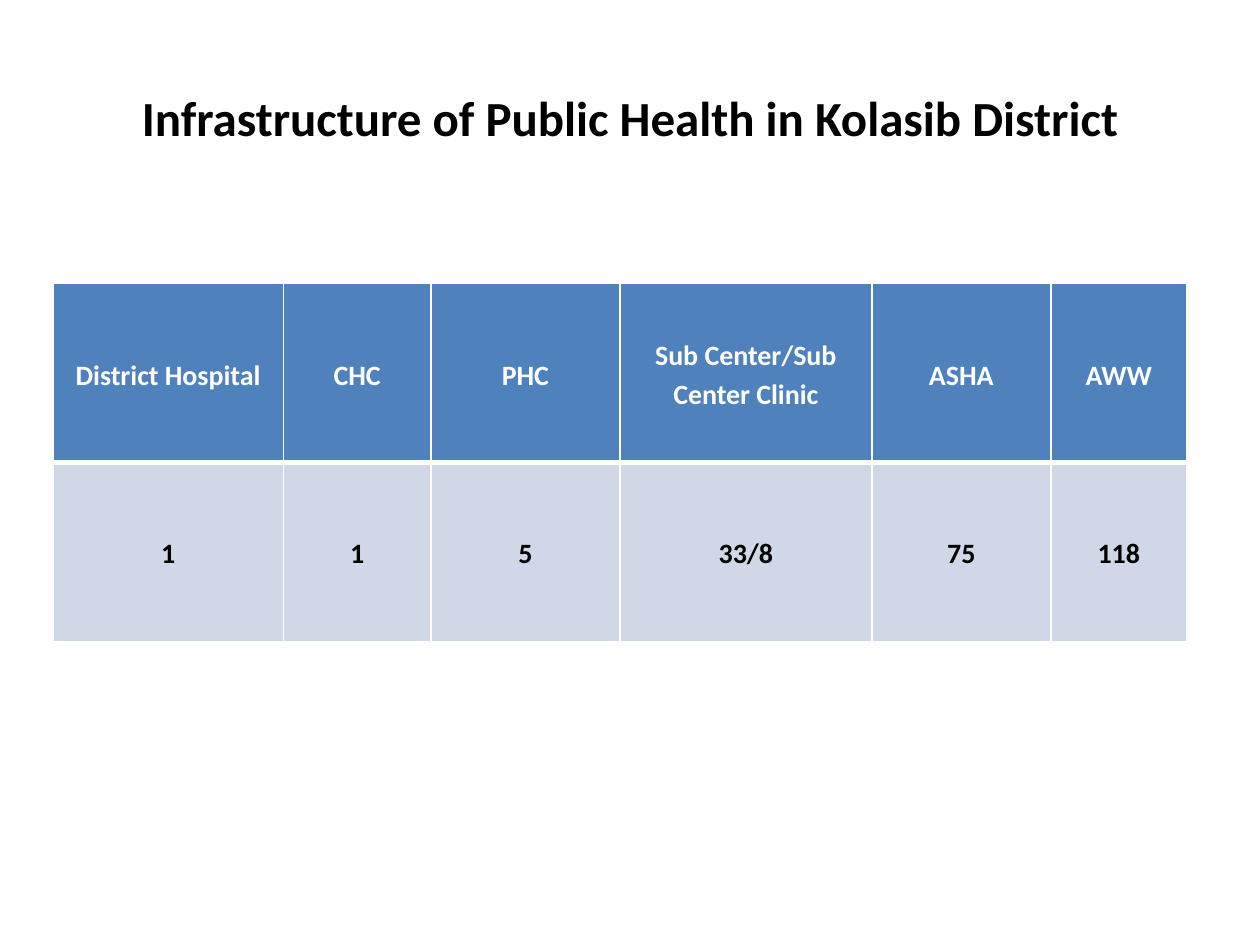
from dataclasses import dataclass

from lxml import etree
from pptx import Presentation
from pptx.dml.color import RGBColor
from pptx.enum import text
from pptx.oxml.ns import qn
from pptx.util import Inches, Pt


@dataclass(frozen=True)
class Theme:
    font: str = "Calibri"
    title_size: int = 28
    table_size: int = 16
    ink: str = "000000"
    paper: str = "FFFFFF"
    header_fill: str = "4F81BD"
    body_fill: str = "D0D8E8"


def write(frame, words, *, font, size, color, bold=True, spacing=1.0):
    para = frame.paragraphs[0]
    para.alignment = text.PP_ALIGN.CENTER
    para.line_spacing = spacing
    span = para.add_run()
    span.text = words
    span.font.name = font
    span.font.size = Pt(size)
    span.font.bold = bold
    span.font.color.rgb = RGBColor.from_string(color)


def set_borders(cell, color, bottom):
    """Rule all four sides at 1 pt, except the bottom at the given width."""
    properties = cell._tc.get_or_add_tcPr()
    widths = {"lnL": 1, "lnR": 1, "lnT": 1, "lnB": bottom}
    # Border lines have to stand before the cell's fill.
    for position, (side, width) in enumerate(widths.items()):
        line = etree.Element(qn(f"a:{side}"), w=str(Pt(width)))
        fill = etree.SubElement(line, qn("a:solidFill"))
        etree.SubElement(fill, qn("a:srgbClr"), val=color)
        properties.insert(position, line)


class SlideBuilder:
    def __init__(self, page, theme):
        self.page = page
        self.theme = theme

    def title(self, words, left, top, width, height):
        box = self.page.shapes.add_textbox(
            Inches(left), Inches(top), Inches(width), Inches(height))
        frame = box.text_frame
        frame.word_wrap = True
        frame.vertical_anchor = text.MSO_ANCHOR.MIDDLE
        write(frame, words, font=self.theme.font,
              size=self.theme.title_size, color=self.theme.ink)

    def table(self, rows, left, top, column_widths, row_height):
        theme = self.theme
        table = self.page.shapes.add_table(
            len(rows), len(column_widths), Inches(left), Inches(top),
            Inches(sum(column_widths)), Inches(row_height * len(rows))).table
        table.horz_banding = False
        for column, width in zip(table.columns, column_widths):
            column.width = Inches(width)
        for r, row in enumerate(rows):
            table.rows[r].height = Inches(row_height)
            header = r == 0
            for c, words in enumerate(row):
                cell = table.cell(r, c)
                cell.margin_left = cell.margin_right = Inches(0.07)
                cell.margin_top = cell.margin_bottom = 0
                cell.vertical_anchor = text.MSO_ANCHOR.MIDDLE
                cell.fill.solid()
                cell.fill.fore_color.rgb = RGBColor.from_string(
                    theme.header_fill if header else theme.body_fill)
                set_borders(cell, theme.paper, bottom=3 if header else 1)
                write(cell.text_frame, words, font=theme.font,
                      size=theme.table_size, spacing=1.15,
                      color=theme.paper if header else theme.ink)


def main():
    deck = Presentation()
    deck.slide_width, deck.slide_height = Inches(10), Inches(7.5)
    page = deck.slides.add_slide(deck.slide_layouts[6])
    builder = SlideBuilder(page, Theme())
    builder.title("Infrastructure of Public Health in Kolasib District",
                  0.5, 0.3, 9, 1.25)
    facilities = {
        "District Hospital": "1",
        "CHC": "1",
        "PHC": "5",
        "Sub Center/Sub Center Clinic": "33/8",
        "ASHA": "75",
        "AWW": "118",
    }
    builder.table([list(facilities), list(facilities.values())], 0.42, 2.25,
                  [1.83, 1.17, 1.5, 2, 1.42, 1.08], 1.42)
    deck.save("out.pptx")


if __name__ == "__main__":
    main()
